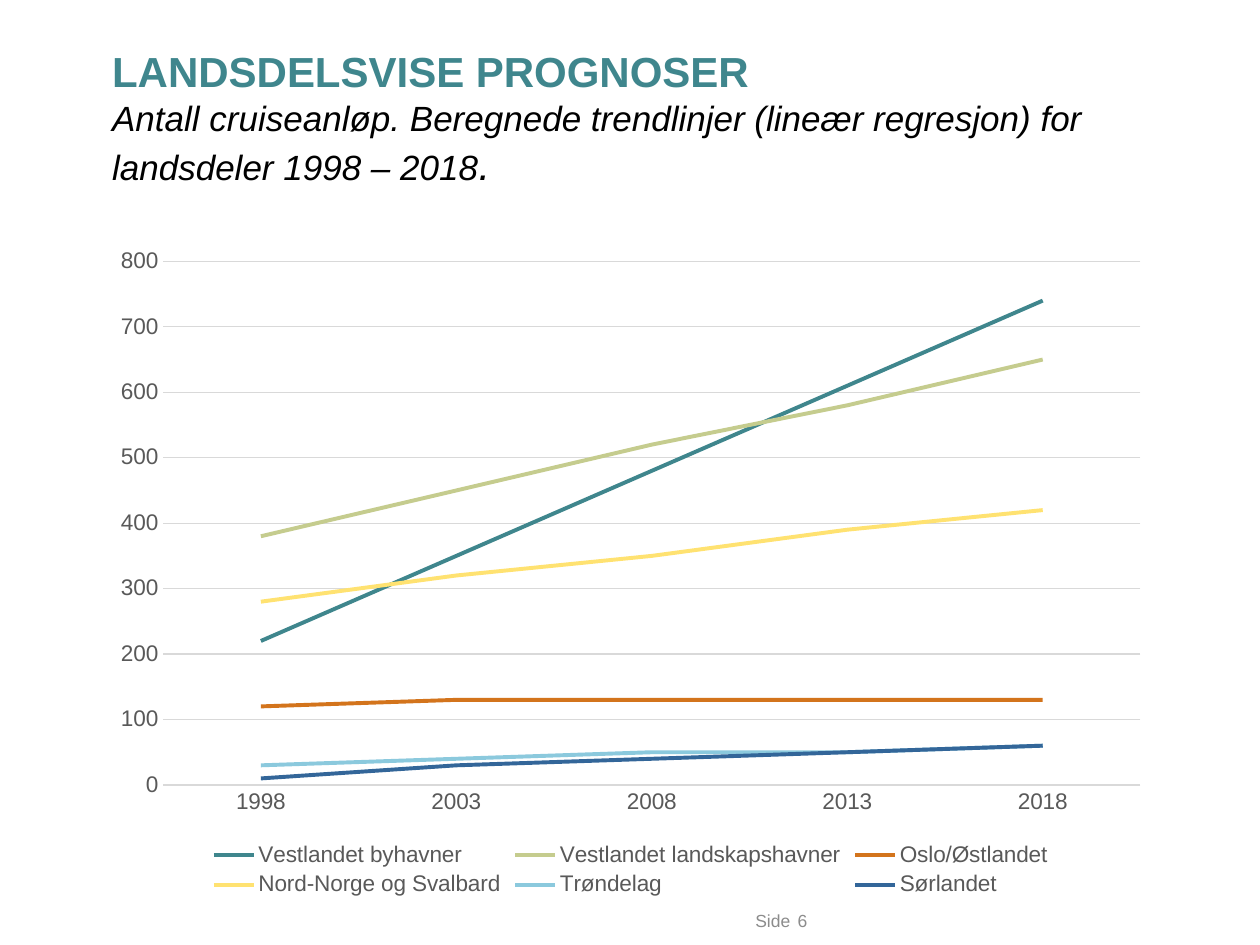
from pptx import Presentation
from pptx.chart.data import CategoryChartData
from pptx.dml.color import RGBColor
from pptx.enum.chart import XL_CHART_TYPE, XL_LEGEND_POSITION, XL_MARKER_STYLE, XL_TICK_MARK
from pptx.enum.text import MSO_ANCHOR, PP_ALIGN
from pptx.util import Cm, Pt

LINE_CHART = XL_CHART_TYPE.LINE
LEGEND_BOTTOM = XL_LEGEND_POSITION.BOTTOM
NO_MARKER = XL_MARKER_STYLE.NONE
NO_TICK = XL_TICK_MARK.NONE
MIDDLE = MSO_ANCHOR.MIDDLE
LEFT, RIGHT = PP_ALIGN.LEFT, PP_ALIGN.RIGHT

FONT = "Arial"
COLORS = {
    "teal": "3F868D",
    "green": "C5CC8E",
    "orange": "D3741C",
    "yellow": "FFE271",
    "sky": "8BC9DD",
    "blue": "336699",
    "black": "000000",
    "label": "595959",
    "footer": "8C8C8C",
    "grid": "D9D9D9",
}
YEARS = ["1998", "2003", "2008", "2013", "2018"]
REGIONS = [
    ("Vestlandet byhavner", "teal", (220, 350, 480, 610, 740)),
    ("Vestlandet landskapshavner", "green", (380, 450, 520, 580, 650)),
    ("Oslo/Østlandet", "orange", (120, 130, 130, 130, 130)),
    ("Nord-Norge og Svalbard", "yellow", (280, 320, 350, 390, 420)),
    ("Trøndelag", "sky", (30, 40, 50, 50, 60)),
    ("Sørlandet", "blue", (10, 30, 40, 50, 60)),
]


def color(name):
    """Return the named colour."""
    return RGBColor.from_string(COLORS[name])


def format_font(font, size, color_name, bold=False, italic=False):
    """Set the look of a font."""
    font.name = FONT
    font.size = Pt(size)
    font.bold = bold
    font.italic = italic
    font.color.rgb = color(color_name)


def format_line(line, color_name, width):
    """Set the colour and width of a line."""
    line.color.rgb = color(color_name)
    line.width = Pt(width)


def add_run(paragraph, text, **style):
    """Add formatted text to a paragraph."""
    run = paragraph.add_run()
    run.text = text
    format_font(run.font, **style)


def add_text_box(slide, box, margins=(0, 0, 0, 0), align=LEFT):
    """Add a middle-anchored text box and return its paragraph."""
    frame = slide.shapes.add_textbox(*map(Cm, box)).text_frame
    frame.word_wrap = True
    frame.vertical_anchor = MIDDLE
    (frame.margin_left, frame.margin_top,
     frame.margin_right, frame.margin_bottom) = map(Cm, margins)
    paragraph = frame.paragraphs[0]
    paragraph.alignment = align
    return paragraph


def add_heading(slide, box):
    """Place the title and its subtitle in the box."""
    paragraph = add_text_box(slide, box, margins=(0.25, 0.13, 0.25, 1.1))
    add_run(paragraph, "LANDSDELSVISE PROGNOSER", size=24, color_name="teal", bold=True)
    paragraph.add_line_break()
    add_run(
        paragraph,
        "Antall cruiseanløp. Beregnede trendlinjer (lineær regresjon) "
        "for landsdeler 1998 – 2018",
        size=20, color_name="black", italic=True,
    )
    add_run(paragraph, ".", size=24, color_name="black", italic=True)


def add_trend_chart(slide, box):
    """Place the line chart of the regions in the box."""
    data = CategoryChartData(number_format="0")
    data.categories = YEARS
    for name, _, values in REGIONS:
        data.add_series(name, values)
    chart = slide.shapes.add_chart(LINE_CHART, *map(Cm, box), data).chart
    format_font(chart.font, 12.9, "black")
    chart.has_title = False
    chart.has_legend = True
    chart.legend.position = LEGEND_BOTTOM
    chart.legend.include_in_layout = False
    format_font(chart.legend.font, 12.9, "label")

    for axis in (chart.category_axis, chart.value_axis):
        axis.major_tick_mark = axis.minor_tick_mark = NO_TICK
        format_font(axis.tick_labels.font, 12.9, "label")
    format_line(chart.category_axis.format.line, "grid", 0.75)

    value_axis = chart.value_axis
    value_axis.minimum_scale, value_axis.maximum_scale = 0, 800
    value_axis.major_unit = 100
    value_axis.tick_labels.number_format = "0"
    value_axis.tick_labels.number_format_is_linked = False
    value_axis.format.line.fill.background()
    format_line(value_axis.major_gridlines.format.line, "grid", 0.75)

    chart.plots[0].vary_by_categories = False
    for series, (_, color_name, _) in zip(chart.plots[0].series, REGIONS):
        series.smooth = False
        series.marker.style = NO_MARKER
        format_line(series.format.line, color_name, 2.25)


def add_footer(slide, box):
    """Place the page label and number at the two ends of the box."""
    left, top, width, height = box
    part_width = 1.22
    parts = (("Side", left, RIGHT), ("6", left + width - part_width, LEFT))
    for text, part_left, align in parts:
        paragraph = add_text_box(slide, (part_left, top, part_width, height), align=align)
        add_run(paragraph, text, size=10, color_name="footer")


def main():
    """Build and save the presentation."""
    presentation = Presentation()
    presentation.slide_width = Cm(25.4)
    presentation.slide_height = Cm(19.05)
    slide = presentation.slides.add_slide(presentation.slide_layouts[6])
    add_heading(slide, (2.01, 2.21, 22.86, 1.27))
    add_trend_chart(slide, (2.01, 4.75, 21.41, 13.44))
    add_footer(slide, (14.71, 18.19, 2.59, 0.74))
    presentation.save("out.pptx")


if __name__ == "__main__":
    main()
